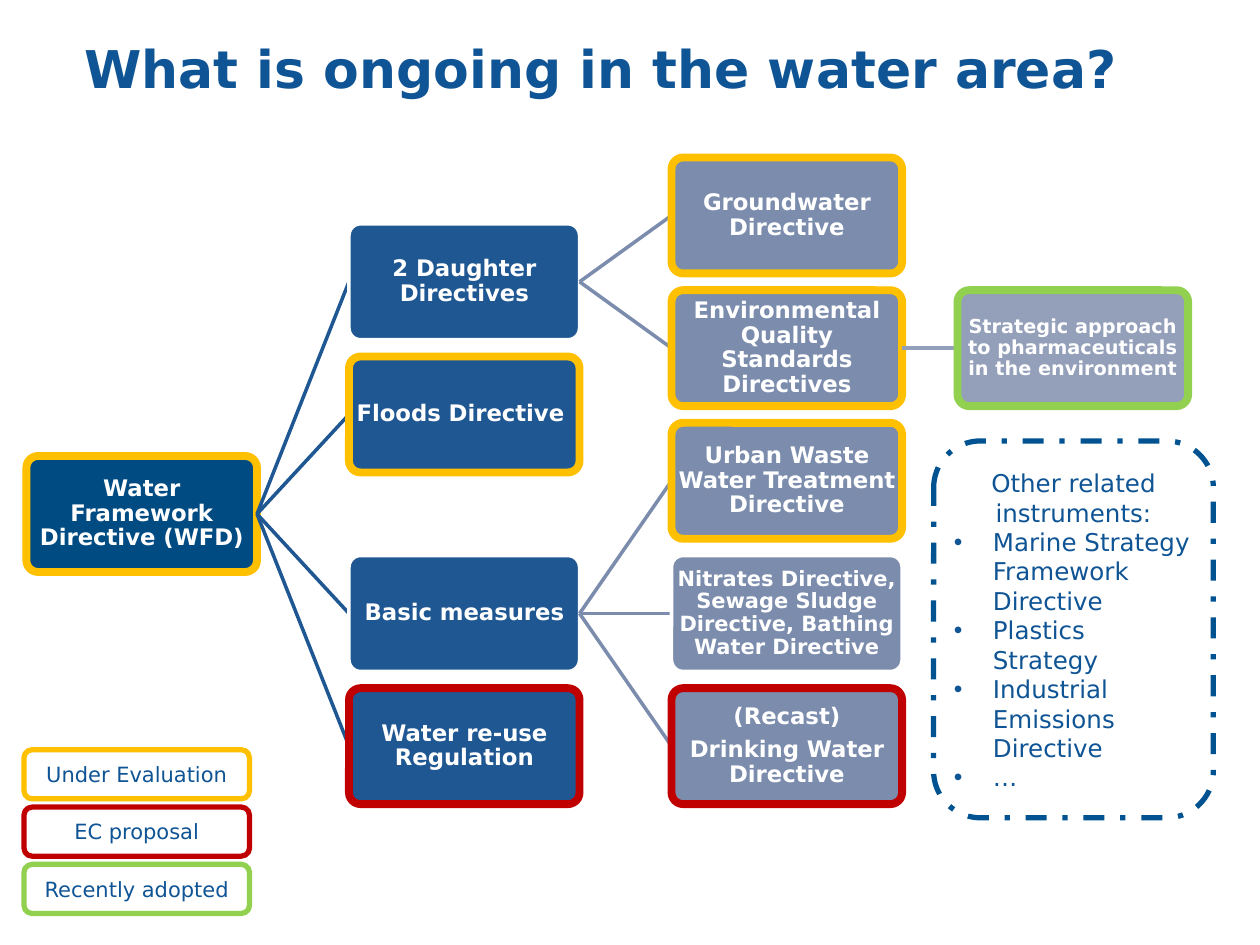
from dataclasses import dataclass, field

from lxml.etree import SubElement
from pptx import Presentation
from pptx.dml.color import RGBColor
from pptx.enum.dml import MSO_LINE
from pptx.enum.shapes import MSO_CONNECTOR, MSO_SHAPE
from pptx.enum.text import MSO_ANCHOR, MSO_AUTO_SIZE, PP_ALIGN
from pptx.oxml.ns import qn
from pptx.util import Inches, Pt

FONT = "DejaVu Sans"
COLORS = {
    "text": "0F5494", "white": "FFFFFF", "panel": "005390",
    "evaluation": "FFC000", "proposal": "C00000", "adopted": "92D050",
}
LEVEL_FILLS = ["004B82", "1F5792", "7B8CAD", "94A0BA"]

COLUMNS = [0.21, 2.77, 5.33, 7.6]
ROW_TOP, ROW_STEP = 1.25, 1.053
BOX_WIDTH, BOX_HEIGHT = 1.83, 0.92
LEGEND_TOP, LEGEND_STEP = 5.95, 0.455
LEFT_SITE, RIGHT_SITE = 1, 3


@dataclass
class Node:
    """A box of the tree; row counts in steps of the grid and may be a fraction."""
    lines: list
    row: float
    status: str = "white"
    size: float = 13
    children: list = field(default_factory=list)


DIRECTIVES = Node(["Water Framework Directive (WFD)"], 2.25, "evaluation", children=[
    Node(["2 Daughter Directives"], 0.5, children=[
        Node(["Groundwater Directive"], 0, "evaluation"),
        Node(["Environmental Quality Standards Directives"], 1, "evaluation", children=[
            Node(["Strategic approach to pharmaceuticals in the environment"],
                 1, "adopted", 11),
        ]),
    ]),
    Node(["Floods Directive "], 1.5, "evaluation"),
    Node(["Basic measures"], 3, children=[
        Node(["Urban Waste Water Treatment Directive"], 2, "evaluation"),
        Node(["Nitrates Directive, Sewage Sludge Directive, Bathing Water Directive"],
             3, size=12),
        Node(["(Recast)", "Drinking Water Directive"], 4, "proposal"),
    ]),
    Node(["Water re-use Regulation"], 4, "proposal"),
])
LEGEND = {
    "evaluation": "Under Evaluation",
    "proposal": "EC proposal",
    "adopted": "Recently adopted",
}
INSTRUMENTS = ["Marine Strategy Framework Directive", "Plastics Strategy",
               "Industrial Emissions Directive", "…"]


def rgb(color):
    return RGBColor.from_string(color)


def set_all(target, values):
    for name, value in values.items():
        setattr(target, name, value)


def place(shape, left, top, width, height):
    set_all(shape, {"left": Inches(left), "top": Inches(top),
                    "width": Inches(width), "height": Inches(height)})


def write(shape, lines, size, color, inset, bold=False, **paragraph_format):
    frame = shape.text_frame
    frame.text = "\n".join(lines)
    margins = {f"margin_{side}": Inches(inset)
               for side in ("left", "right", "top", "bottom")}
    set_all(frame, {"word_wrap": True, "auto_size": MSO_AUTO_SIZE.NONE,
                    "vertical_anchor": MSO_ANCHOR.MIDDLE, **margins})
    for paragraph in frame.paragraphs:
        set_all(paragraph, paragraph_format)
        set_all(paragraph.font, {"name": FONT, "size": Pt(size), "bold": bold})
        paragraph.font.color.rgb = rgb(color)
    frame.paragraphs[0].space_before = Pt(0)


def set_bullet(paragraph, character=None, margin=0, indent=0):
    properties = paragraph._p.get_or_add_pPr()
    properties.set("marL", str(Inches(margin)))
    properties.set("indent", str(Inches(indent)))
    if character:
        SubElement(properties, qn("a:buChar"), char=character)
    else:
        SubElement(properties, qn("a:buNone"))


def add_rounded_box(slide, bounds, outline, weight, fill=None, corner=0.167):
    box = slide.shapes.add_shape(MSO_SHAPE.ROUNDED_RECTANGLE,
                                 *(Inches(length) for length in bounds))
    box.shadow.inherit = False
    box.adjustments[0] = corner
    if fill:
        box.fill.solid()
        box.fill.fore_color.rgb = rgb(fill)
    else:
        box.fill.background()
    box.line.color.rgb = rgb(outline)
    box.line.width = Pt(weight)
    return box


def add_branch(slide, parent, child, color):
    """Join two boxes with a line that lies just behind the child."""
    branch = slide.shapes.add_connector(MSO_CONNECTOR.STRAIGHT, 0, 0, 0, 0)
    branch.begin_connect(parent, RIGHT_SITE)
    branch.end_connect(child, LEFT_SITE)
    branch.line.color.rgb = rgb(color)
    branch.line.width = Pt(2)
    SubElement(branch.element.spPr, qn("a:effectLst"))
    child.element.addprevious(branch.element)


def add_tree(slide, node, level=0, parent=None):
    bounds = (COLUMNS[level], ROW_TOP + node.row * ROW_STEP, BOX_WIDTH, BOX_HEIGHT)
    fill = LEVEL_FILLS[level]
    weight = 2 if node.status == "white" else 4.5
    box = add_rounded_box(slide, bounds, COLORS[node.status], weight, fill, 0.1)
    write(box, node.lines, node.size, COLORS["white"], 0.01, bold=True,
          alignment=PP_ALIGN.CENTER, line_spacing=0.9, space_before=Pt(5))
    if parent:
        add_branch(slide, parent, box, fill)
    for child in node.children:
        add_tree(slide, child, level + 1, box)


def add_legend(slide):
    for index, (status, label) in enumerate(LEGEND.items()):
        bounds = (0.19, LEGEND_TOP + index * LEGEND_STEP, 1.79, 0.39)
        key = add_rounded_box(slide, bounds, COLORS[status], 3, COLORS["white"])
        write(key, [label], 12, COLORS["text"], 0.03, alignment=PP_ALIGN.CENTER)


def fill_title(title):
    place(title, 0.62, 0.03, 9, 1.02)
    write(title, ["What is ongoing in the water area?"], 29.7, COLORS["text"], 0.05,
          bold=True, alignment=PP_ALIGN.LEFT)


def add_instruments(slide, body):
    panel = add_rounded_box(slide, (7.41, 3.5, 2.22, 2.99), COLORS["panel"], 3)
    panel.line.dash_style = MSO_LINE.DASH_DOT
    place(body, 7.52, 3.66, 2, 2.68)
    write(body, ["Other related instruments:", *INSTRUMENTS], 14, COLORS["text"], 0.04,
          space_before=Pt(0))
    heading, *items = body.text_frame.paragraphs
    heading.alignment = PP_ALIGN.CENTER
    set_bullet(heading)
    for item in items:
        set_bullet(item, "•", 0.32, -0.31)


def main():
    deck = Presentation()
    deck.slide_width, deck.slide_height = Inches(10), Inches(7.5)
    slide = deck.slides.add_slide(deck.slide_layouts[1])
    title, body = slide.placeholders
    fill_title(title)
    add_tree(slide, DIRECTIVES)
    add_instruments(slide, body)
    add_legend(slide)
    deck.save("out.pptx")


if __name__ == "__main__":
    main()
